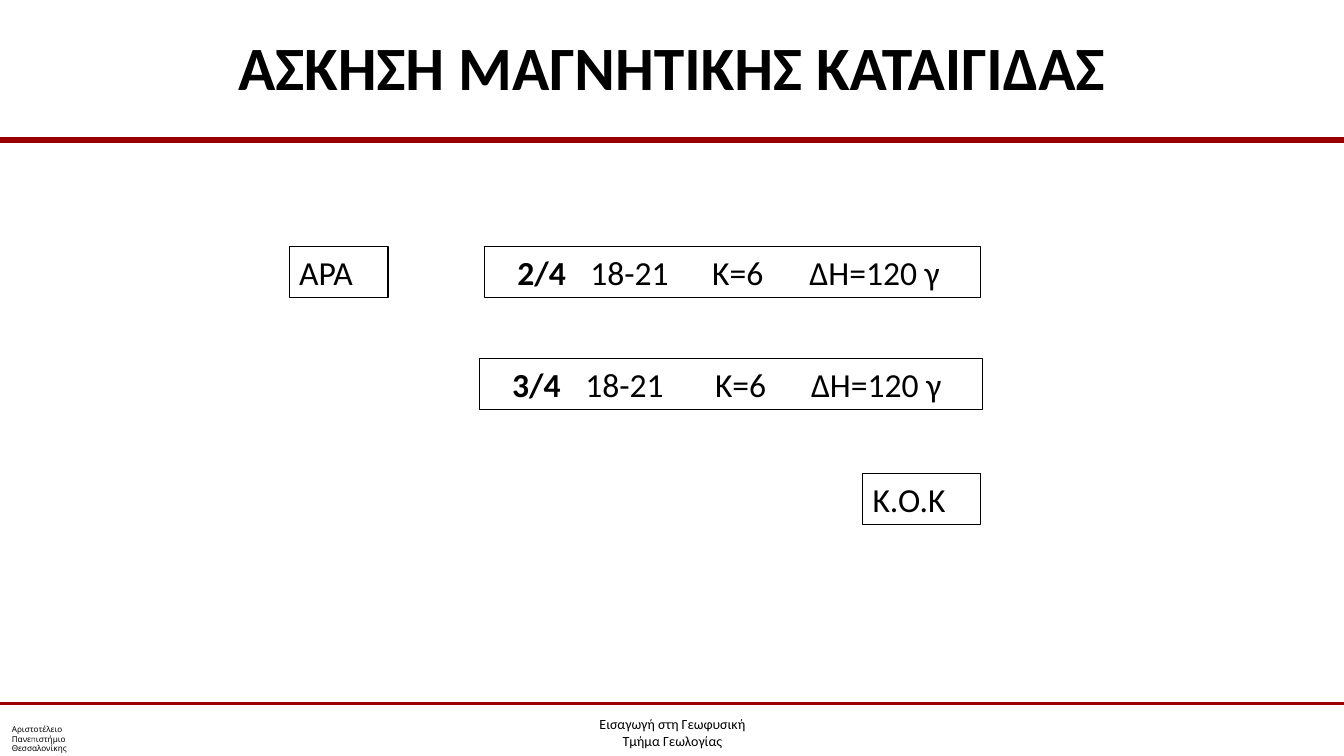
from pptx import Presentation
from pptx.dml.color import RGBColor
from pptx.enum.shapes import MSO_CONNECTOR, MSO_SHAPE
from pptx.enum.text import MSO_ANCHOR, PP_ALIGN
from pptx.oxml.ns import qn
from pptx.util import Cm, Pt
from lxml.etree import SubElement

BLACK = RGBColor(0, 0, 0)
RED = RGBColor(0x99, 0, 0)
WIDTH = Cm(33.87)


def write(par, text, size, bold=False, face="Calibri"):
    run = par.add_run()
    run.text = text
    run.font.size = Pt(size)
    run.font.bold = bold
    run.font.name = face
    run.font.color.rgb = BLACK


def frame(left, top, width, height):
    """Add an outlined box and return its text frame."""
    box = slide.shapes.add_shape(MSO_SHAPE.RECTANGLE, Cm(left), Cm(top), Cm(width), Cm(height))
    box.shadow.inherit = False
    box.fill.background()
    box.line.color.rgb = BLACK
    box.line.width = Pt(0.75)
    text = box.text_frame
    text.word_wrap = True
    text.vertical_anchor = MSO_ANCHOR.TOP
    text.paragraphs[0].alignment = PP_ALIGN.LEFT
    return text


deck = Presentation()
deck.slide_width = WIDTH
deck.slide_height = Cm(19.05)
slide = deck.slides.add_slide(deck.slide_layouts[5])

# Title
title = slide.shapes.title
title.left, title.top, title.width, title.height = Cm(1.7), Cm(0.08), Cm(30.48), Cm(3.18)
title.text_frame.vertical_anchor = MSO_ANCHOR.MIDDLE
head = title.text_frame.paragraphs[0]
head.alignment = PP_ALIGN.CENTER
write(head, "ΑΣΚΗΣΗ ΜΑΓΝΗΤΙΚΗΣ ΚΑΤΑΙΓΙΔΑΣ", 44, True)

# Red rules under the title and above the footer
for top, weight in ((3.53, 4), (17.73, 2)):
    rule = slide.shapes.add_connector(MSO_CONNECTOR.STRAIGHT, 0, Cm(top), WIDTH, Cm(top))
    rule.line.color.rgb = RED
    rule.line.width = Pt(weight)
    SubElement(rule.element.spPr, qn("a:effectLst"))

# Footer: university name and course
school = slide.shapes.add_textbox(Cm(0.05), Cm(18.19), Cm(2.67), Cm(0.86)).text_frame
school.word_wrap = True
school.vertical_anchor = MSO_ANCHOR.MIDDLE
course = slide.shapes.add_textbox(Cm(11.61), Cm(17.53), Cm(10.67), Cm(1.52)).text_frame
course.word_wrap = True
course.margin_top = course.margin_bottom = 0
footers = (
    (school, ("Αριστοτέλειο", "Πανεπιστήμιο", "Θεσσαλονίκης"), 5.8, "Quicksand", PP_ALIGN.LEFT),
    (course, ("Εισαγωγή στη Γεωφυσική", "Τμήμα Γεωλογίας"), 10, "Calibri", PP_ALIGN.CENTER),
)
for text, lines, size, face, align in footers:
    for i, line in enumerate(lines):
        par = text.add_paragraph() if i else text.paragraphs[0]
        par.alignment = align
        write(par, line, size, face=face)
course.paragraphs[0].line_spacing = 2.2

# Short labels
for label, left, top, width in (("ΑΡΑ", 7.29, 6.22, 2.49), ("Κ.Ο.Κ", 21.74, 11.94, 2.97)):
    write(frame(left, top, width, 1.28).paragraphs[0], label, 24)

# Storm readings, set in columns by tabs
readings = (
    ("2/4", 12.21, 6.22, 12.5, (1.84, 4.91, 7.36)),
    ("3/4", 12.08, 9.04, 12.67, (1.84, 5.11, 7.53)),
)
for day, left, top, width, stops in readings:
    text = frame(left, top, width, 1.28)
    text.margin_left = Cm(0.83)
    par = text.paragraphs[0]
    tabs = SubElement(par._p.get_or_add_pPr(), qn("a:tabLst"))
    for stop in stops:
        SubElement(tabs, qn("a:tab"), pos=str(Cm(stop)), algn="l")
    write(par, day, 24, True)
    write(par, "\t18-21\tΚ=6\tΔΗ=120 γ", 24)

deck.save("out.pptx")
